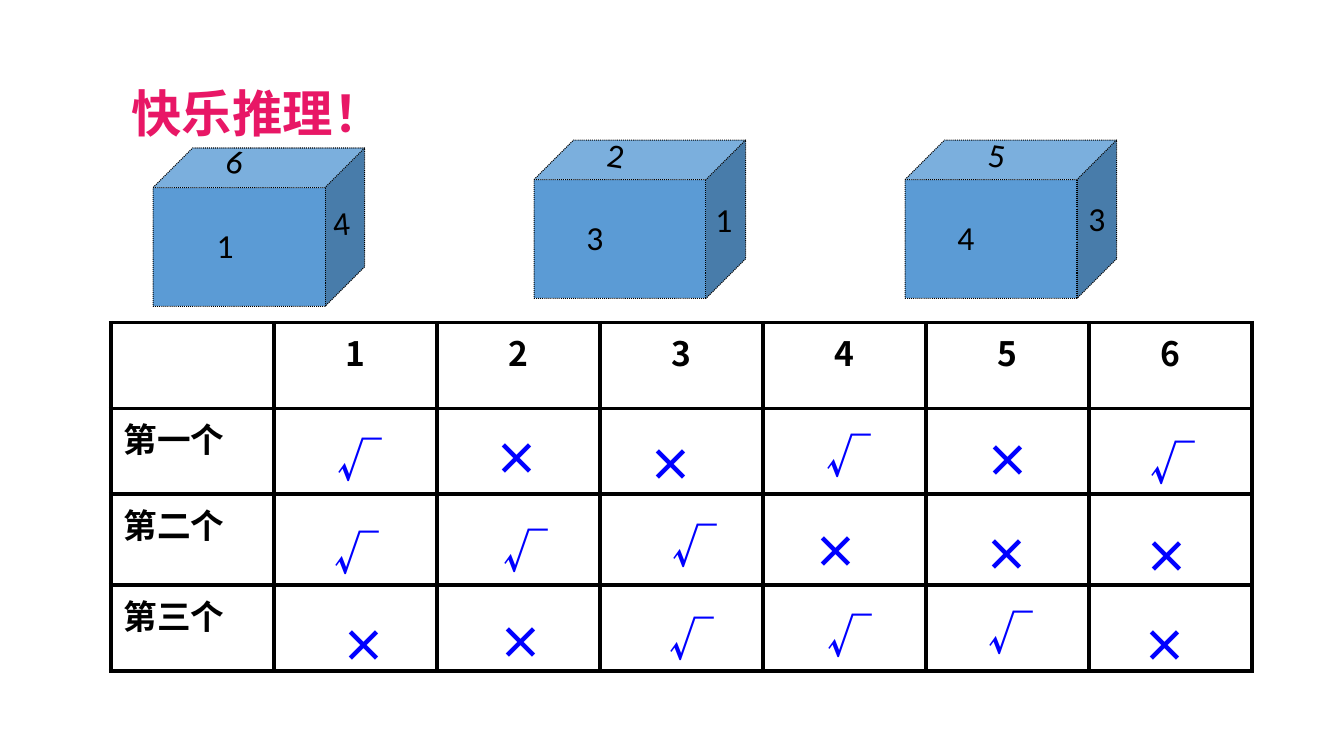
import pptx
import pptx.util
import pptx.dml.color
import pptx.enum.dml
import pptx.enum.shapes
import pptx.enum.text
import pptx.oxml
import pptx.oxml.ns
from pptx.util import Cm

ALIGN = pptx.enum.text.PP_ALIGN
CJK = "Noto Sans CJK SC"
BLACK, BLUE, PINK, CUBE_BLUE = "000000", "0000FF", "E81766", "5B9BD5"


def color(hex_text):
    return pptx.dml.color.RGBColor.from_string(hex_text)


def apply(target, values):
    for name, value in values.items():
        setattr(target, name, value)


class Board:
    """Holds the text styles and the slide being filled."""

    styles = {
        "title": dict(name=CJK, size=36, bold=True, color=PINK),
        "digit": dict(name="Calibri", size=24, bold=False, color=BLACK),
        "header": dict(name=CJK, size=24, bold=True, color=BLACK),
        "label": dict(name="Times New Roman", size=24, bold=True, color=BLACK),
        "mark": dict(name=CJK, size=32, bold=True, color=BLUE),
        "gap": dict(name=CJK, size=18, bold=True, color=BLUE),
    }

    def __init__(self, page):
        self.page = page

    def add_spans(self, frame, spans, align=ALIGN.LEFT):
        para = frame.paragraphs[0]
        para.alignment = align
        for text, style in spans:
            look = self.styles[style]
            span = para.add_run()
            span.text = text
            apply(span.font, dict(name=look["name"], bold=look["bold"],
                                  size=pptx.util.Pt(look["size"])))
            span.font.color.rgb = color(look["color"])
            # East Asian glyphs take their own typeface
            east = pptx.oxml.parse_xml(
                f'<a:ea {pptx.oxml.ns.nsdecls("a")} typeface="{CJK}"/>')
            span.font._element.find(pptx.oxml.ns.qn("a:latin")).addnext(east)

    def title(self, text, left, top, width, height):
        box = self.page.shapes.title
        apply(box, dict(left=Cm(left), top=Cm(top), width=Cm(width), height=Cm(height)))
        apply(box.text_frame, dict(
            word_wrap=False, auto_size=pptx.enum.text.MSO_AUTO_SIZE.NONE,
            vertical_anchor=pptx.enum.text.MSO_ANCHOR.TOP))
        self.add_spans(box.text_frame, [(text, "title")], ALIGN.CENTER)
        box.text_frame.paragraphs[0].line_spacing = 1.0

    def text(self, spans, left, top, width, height, align=ALIGN.LEFT, turn=0):
        box = self.page.shapes.add_textbox(Cm(left), Cm(top), Cm(width), Cm(height))
        box.rotation = turn
        apply(box.text_frame, dict(
            word_wrap=True, auto_size=pptx.enum.text.MSO_AUTO_SIZE.SHAPE_TO_FIT_TEXT))
        self.add_spans(box.text_frame, spans, align)

    def cube(self, left, top):
        box = self.page.shapes.add_shape(pptx.enum.shapes.MSO_SHAPE.CUBE,
                                         Cm(left), Cm(top), Cm(5.33), Cm(3.99))
        box.shadow.inherit = False
        box.fill.solid()
        box.fill.fore_color.rgb = color(CUBE_BLUE)
        box.line.color.rgb = color(BLACK)
        apply(box.line, dict(width=pptx.util.Pt(0.75),
                             dash_style=pptx.enum.dml.MSO_LINE.ROUND_DOT))

    def digit(self, text, left, top, turn=0):
        self.text([(text, "digit")], left, top, 1.85, 1.27, turn=turn)

    def mark(self, sign, left, top):
        if sign == "√":
            self.text([(" ", "gap"), (sign, "mark")], left, top, 2.44, 1.63, ALIGN.CENTER)
        else:
            self.text([(sign, "mark")], left, top, 1.8, 1.63)

    def table(self, rows, left, top, column_width, row_heights):
        columns = len(rows[0])
        frame = self.page.shapes.add_table(
            len(rows), columns, Cm(left), Cm(top),
            Cm(column_width * columns), Cm(sum(row_heights)))
        grid = frame.table
        apply(grid, dict(first_row=False, horz_banding=False))
        for column in grid.columns:
            column.width = Cm(column_width)
        for row, height, texts in zip(grid.rows, row_heights, rows):
            row.height = Cm(height)
            for cell, text in zip(row.cells, texts):
                apply(cell, dict(margin_left=Cm(0.33), margin_right=Cm(0.33),
                                 margin_top=Cm(0.13), margin_bottom=Cm(0.13)))
                self.border(cell)
                cell.fill.background()
                if text.isdigit():
                    self.add_spans(cell.text_frame, [(text, "header")], ALIGN.CENTER)
                elif text:
                    self.add_spans(cell.text_frame, [(text, "label")])

    def border(self, cell):
        properties = cell._tc.get_or_add_tcPr()
        for side in ("lnL", "lnR", "lnT", "lnB"):
            properties.append(pptx.oxml.parse_xml(
                f'<a:{side} {pptx.oxml.ns.nsdecls("a")} w="{pptx.util.Pt(3)}">'
                f'<a:solidFill><a:srgbClr val="{BLACK}"/></a:solidFill></a:{side}>'))


# Each cube: corner, then digit, left, top and turn for its three faces
CUBES = [
    ((3.86, 3.73), [("1", 5.21, 5.54), ("6", 5.46, 3.53, 14.4), ("4", 8.13, 4.93, -5.2)]),
    ((13.46, 3.53), [("3", 14.53, 5.33), ("2", 15.06, 3.33, 8.8), ("1", 17.78, 4.88)]),
    ((22.81, 3.53), [("4", 23.88, 5.33), ("5", 24.66, 3.33, 8.3), ("3", 27.18, 4.85)]),
]

# Hand-placed answers, one line per table row
MARKS = [
    ("√××√×√", [(7.77, 10.77), (12.22, 10.72), (16.1, 10.87),
                (20.09, 10.67), (24.59, 10.77), (28.27, 10.85)]),
    ("√√√×××", [(7.7, 13.13), (11.96, 13.06), (16.21, 12.95),
                (20.24, 13.08), (24.56, 13.16), (28.6, 13.21)]),
    ("××√√√×", [(8.36, 15.44), (12.32, 15.37), (16.15, 15.29),
                (20.14, 15.21), (24.18, 15.14), (28.55, 15.44)]),
]


def main():
    deck = pptx.Presentation()
    apply(deck, dict(slide_width=Cm(33.87), slide_height=Cm(19.05)))
    board = Board(deck.slides.add_slide(deck.slide_layouts[5]))

    # Title
    board.title("快乐推理！", 2.26, 1.93, 8.46, 1.27)

    # Answer table
    rows = [["", *"123456"]]
    rows += [[label] + [""] * 6 for label in ("第一个", "第二个", "第三个")]
    board.table(rows, 2.79, 8.13, 4.11, [2.16, 2.16, 2.29, 2.16])

    # Cubes and their visible digits
    for corner, faces in CUBES:
        board.cube(*corner)
        for face in faces:
            board.digit(*face)

    # Ticks and crosses
    for signs, places in MARKS:
        for sign, place in zip(signs, places):
            board.mark(sign, *place)

    deck.save("out.pptx")


if __name__ == "__main__":
    main()
